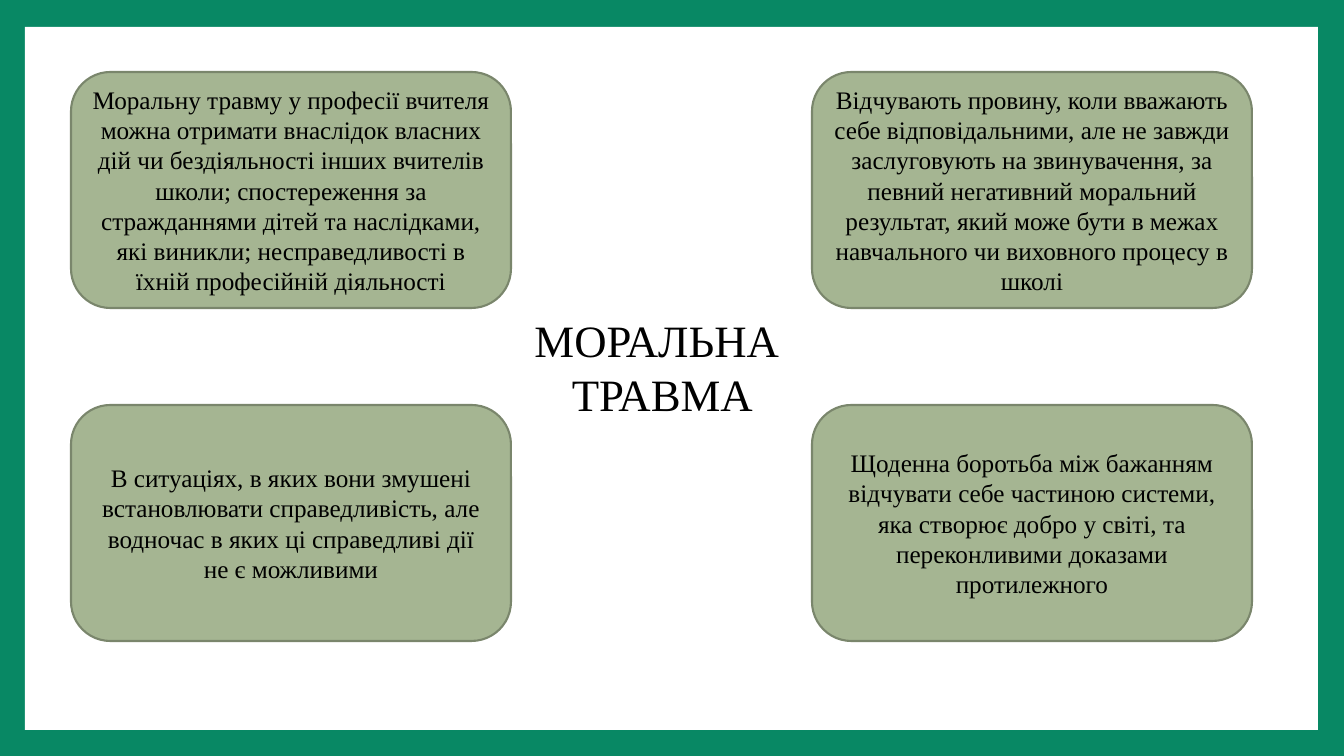
from pptx import Presentation
from pptx.dml.color import RGBColor
from pptx.enum.shapes import MSO_SHAPE
from pptx.enum.text import MSO_ANCHOR, MSO_AUTO_SIZE, PP_ALIGN
from pptx.util import Emu, Pt

GREEN = RGBColor(0x08, 0x88, 0x64)
WHITE = RGBColor(0xFF, 0xFF, 0xFF)
SAGE = RGBColor(0xA5, 0xB5, 0x92)
OLIVE = RGBColor(0x7A, 0x86, 0x6C)
BLACK = RGBColor(0x00, 0x00, 0x00)

LEFT, RIGHT = 71, 812
TOP, LOW = 72, 405
CARD = (440, 236)

CARDS = [
    (LEFT, TOP, "Моральну травму у професії вчителя можна отримати внаслідок "
     "власних дій чи бездіяльності інших вчителів школи; спостереження за "
     "стражданнями дітей та наслідками, які виникли; несправедливості в "
     "їхній професійній діяльності"),
    (LEFT, LOW, "В ситуаціях, в яких вони змушені встановлювати "
     "справедливість, але водночас в яких ці справедливі дії не є можливими"),
    (RIGHT, LOW, "Щоденна боротьба між бажанням відчувати себе частиною "
     "системи, яка створює добро у світі, та переконливими доказами "
     "протилежного"),
    (RIGHT, TOP, "Відчувають провину, коли вважають себе відповідальними, "
     "але не завжди заслуговують на звинувачення, за певний негативний "
     "моральний результат, який може бути в межах навчального чи виховного "
     "процесу в школі"),
]


class Deck:
    font = "Times New Roman"
    scale = 914400 / 100.8

    def __init__(self, width, height):
        self.show = Presentation()
        self.show.slide_width = self.px(width)
        self.show.slide_height = self.px(height)
        self.slide = self.show.slides.add_slide(self.show.slide_layouts[5])

    def px(self, count):
        return Emu(round(count * self.scale))

    def paint(self, color):
        fill = self.slide.background.fill
        fill.solid()
        fill.fore_color.rgb = color

    def label(self, frame, text, size, anchor):
        frame.text = text
        frame.word_wrap = True
        frame.vertical_anchor = anchor
        style = {"name": self.font, "size": Pt(size), "bold": False}
        for para in frame.paragraphs:
            para.alignment = PP_ALIGN.CENTER
            for run in para.runs:
                for key, value in style.items():
                    setattr(run.font, key, value)
                run.font.color.rgb = BLACK

    def panel(self, kind, box, color):
        shape = self.slide.shapes.add_shape(kind, *map(self.px, box))
        shape.shadow.inherit = False
        shape.fill.solid()
        shape.fill.fore_color.rgb = color
        shape.line.fill.background()
        return shape

    def card(self, left, top, text):
        box = (left, top, *CARD)
        shape = self.panel(MSO_SHAPE.ROUNDED_RECTANGLE, box, SAGE)
        shape.line.color.rgb = OLIVE
        shape.line.width = Pt(1.5)
        self.label(shape.text_frame, text, 18, MSO_ANCHOR.MIDDLE)

    def title(self, box, text):
        shape = self.slide.shapes.title
        for key, value in zip(("left", "top", "width", "height"), box):
            setattr(shape, key, self.px(value))
        self.label(shape.text_frame, text, 32, MSO_ANCHOR.TOP)
        shape.text_frame.auto_size = MSO_AUTO_SIZE.SHAPE_TO_FIT_TEXT
        shape.element.getparent().append(shape.element)


def main():
    deck = Deck(1344, 756)
    deck.paint(GREEN)
    deck.panel(MSO_SHAPE.RECTANGLE, (25, 27, 1293, 703), WHITE)
    for card in CARDS:
        deck.card(*card)
    deck.title((355, 308, 615, 119), "МОРАЛЬНА \nТРАВМА")
    deck.show.save("out.pptx")


if __name__ == "__main__":
    main()
